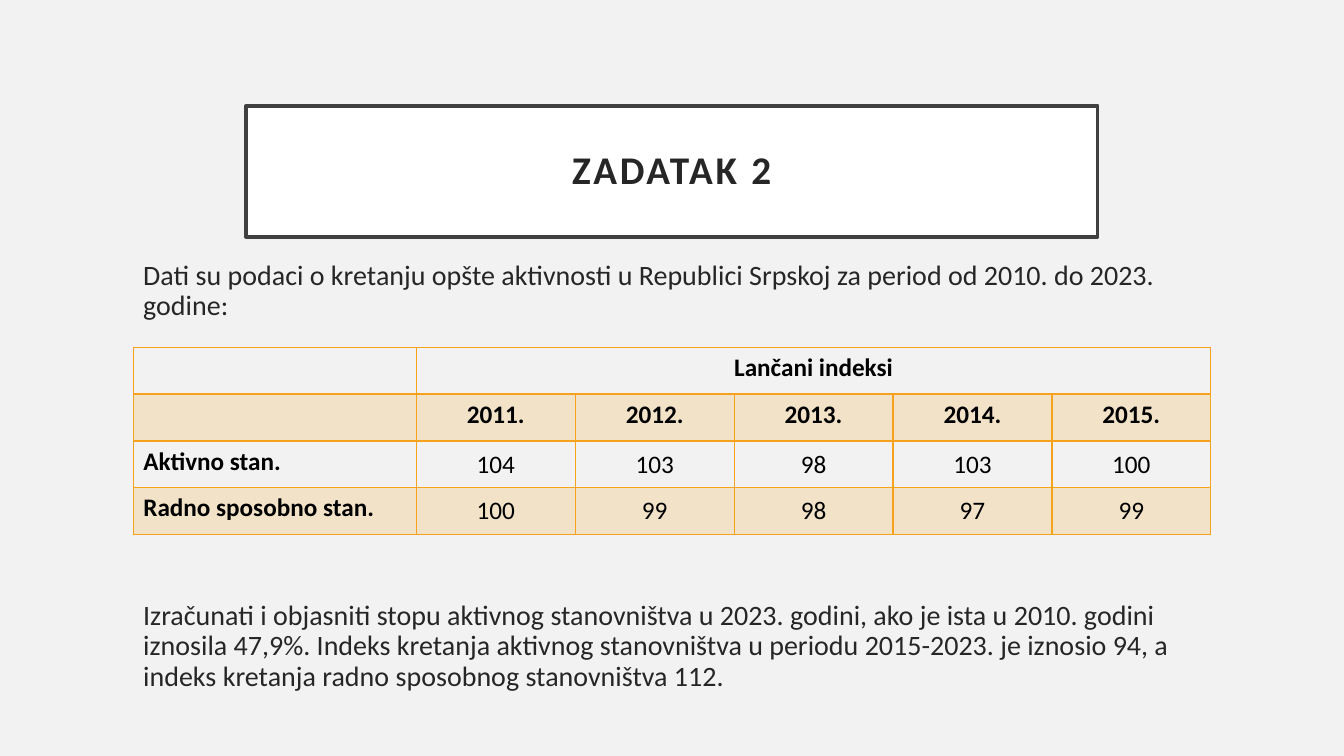
import dataclasses
from typing import Any

import lxml.etree
import pptx
import pptx.dml.color
import pptx.enum.shapes
import pptx.enum.text
import pptx.oxml.ns
import pptx.util

Pt = pptx.util.Pt
Align = pptx.enum.text.PP_ALIGN
Anchor = pptx.enum.text.MSO_ANCHOR
qn = pptx.oxml.ns.qn

FONT = "Calibri"
TEXT_COLOR = "262626"
ACCENT = "F6A21D"
BAND_OPACITY = 20
LABEL_WIDTH, YEAR_WIDTH, ROW_HEIGHT = 202.2, 113.5, 33.4
TABLE_LEFT, TABLE_TOP = 95.2, 248.2
BODY_GAP = 200  # room between the two body paragraphs, where the table stands

YEARS = [f"{year}." for year in range(2011, 2016)]


@dataclasses.dataclass(frozen=True)
class IndexRow:
    label: str
    values: tuple[int, ...]


@dataclasses.dataclass(frozen=True)
class BodyParagraph:
    text: str
    space_before: float


INDEX_ROWS = [
    IndexRow("Aktivno stan.", (104, 103, 98, 103, 100)),
    IndexRow("Radno sposobno stan.", (100, 99, 98, 97, 99)),
]

BODY = [
    BodyParagraph(
        "Dati su podaci o kretanju opšte aktivnosti u Republici Srpskoj "
        "za period od 2010. do 2023. godine:", 0),
    BodyParagraph(
        "Izračunati i objasniti stopu aktivnog stanovništva u 2023. godini, ako je "
        "ista u 2010. godini iznosila 47,9%. Indeks kretanja aktivnog stanovništva "
        "u periodu 2015-2023. je iznosio 94, a indeks kretanja radno sposobnog "
        "stanovništva 112.", BODY_GAP),
]


def rgb(color: str) -> Any:
    return pptx.dml.color.RGBColor.from_string(color)


def apply(target: Any, values: dict[str, Any]) -> None:
    for name, value in values.items():
        setattr(target, name, value)


def write(paragraph: Any, text: str, size: float, color: str, bold: bool = False,
          **paragraph_format: Any) -> Any:
    """Add one formatted run to the paragraph and return it."""
    run = paragraph.add_run()
    run.text = text
    apply(run.font, {"name": FONT, "size": Pt(size), "bold": bold})
    run.font.color.rgb = rgb(color)
    apply(paragraph, paragraph_format)
    return run


def add_title(slide: Any) -> None:
    shape = slide.shapes.add_shape(
        pptx.enum.shapes.MSO_SHAPE.RECTANGLE, Pt(175.7), Pt(75.6), Pt(608.4), Pt(93.6))
    shape.shadow.inherit = False
    shape.fill.solid()
    shape.fill.fore_color.rgb = rgb("FFFFFF")
    shape.line.color.rgb = rgb("404040")
    shape.line.width = Pt(2.5)
    frame = shape.text_frame
    margins = ("margin_left", "margin_top", "margin_right", "margin_bottom")
    apply(frame, {"word_wrap": True, "vertical_anchor": Anchor.MIDDLE}
          | dict.fromkeys(margins, Pt(14.4)))
    run = write(frame.paragraphs[0], "ZADATAK 2", 28, TEXT_COLOR, True,
                alignment=Align.CENTER, line_spacing=0.9)
    run.font._element.set("spc", "200")


def add_body(slide: Any) -> None:
    box = slide.shapes.add_textbox(Pt(95.2), Pt(182.9), Pt(785.5), Pt(326.2))
    frame = box.text_frame
    frame.word_wrap = True
    for index, item in enumerate(BODY):
        paragraph = frame.add_paragraph() if index else frame.paragraphs[0]
        write(paragraph, item.text, 20, TEXT_COLOR, line_spacing=0.9,
              space_before=Pt(item.space_before))


def set_borders(cell: Any, widths: dict[str, float]) -> None:
    """Draw accent lines on the sides named L, R, T and B, in schema order."""
    properties = cell._tc.get_or_add_tcPr()
    for position, (side, width) in enumerate(widths.items()):
        line = lxml.etree.Element(qn(f"a:ln{side}"), w=str(Pt(width)))
        fill = lxml.etree.SubElement(line, qn("a:solidFill"))
        lxml.etree.SubElement(fill, qn("a:srgbClr"), val=ACCENT)
        properties.insert(position, line)


def fill_band(cell: Any) -> None:
    cell.fill.solid()
    cell.fill.fore_color.rgb = rgb(ACCENT)
    color = cell._tc.tcPr.find(f"{qn('a:solidFill')}/{qn('a:srgbClr')}")
    lxml.etree.SubElement(color, qn("a:alpha"), val=str(BAND_OPACITY * 1000))


def add_index_table(slide: Any) -> None:
    rows = [["", "Lančani indeksi"] + [""] * (len(YEARS) - 1), ["", *YEARS]]
    rows += [[row.label, *map(str, row.values)] for row in INDEX_ROWS]
    widths = [LABEL_WIDTH] + [YEAR_WIDTH] * len(YEARS)
    table = slide.shapes.add_table(
        len(rows), len(widths), Pt(TABLE_LEFT), Pt(TABLE_TOP),
        Pt(sum(widths)), Pt(ROW_HEIGHT * len(rows))).table
    apply(table, {"first_row": False, "horz_banding": False})
    for column, width in zip(table.columns, widths):
        column.width = Pt(width)
    for row in table.rows:
        row.height = Pt(ROW_HEIGHT)
    table.cell(0, 1).merge(table.cell(0, len(YEARS)))

    for row_index, texts in enumerate(rows):
        for column_index, text in enumerate(texts):
            cell = table.cell(row_index, column_index)
            is_value = row_index > 1 and column_index > 0
            if row_index % 2:
                fill_band(cell)
            else:
                cell.fill.background()
            set_borders(cell, {"L": 1, "R": 1, "T": 2 if row_index == 1 else 1,
                               "B": 2 if row_index == 0 else 1})
            if is_value:
                apply(cell, {"vertical_anchor": Anchor.MIDDLE,
                             "margin_left": Pt(5), "margin_right": Pt(5),
                             "margin_top": Pt(0), "margin_bottom": Pt(0)})
            if text:
                write(cell.text_frame.paragraphs[0], text, 18, "000000", not is_value,
                      alignment=Align.CENTER if column_index else Align.LEFT)


def main() -> None:
    presentation = pptx.Presentation()
    apply(presentation, {"slide_width": Pt(960), "slide_height": Pt(540)})
    slide = presentation.slides.add_slide(presentation.slide_layouts[6])
    slide.background.fill.solid()
    slide.background.fill.fore_color.rgb = rgb("F2F2F2")
    add_title(slide)
    add_body(slide)
    add_index_table(slide)
    presentation.save("out.pptx")


if __name__ == "__main__":
    main()
